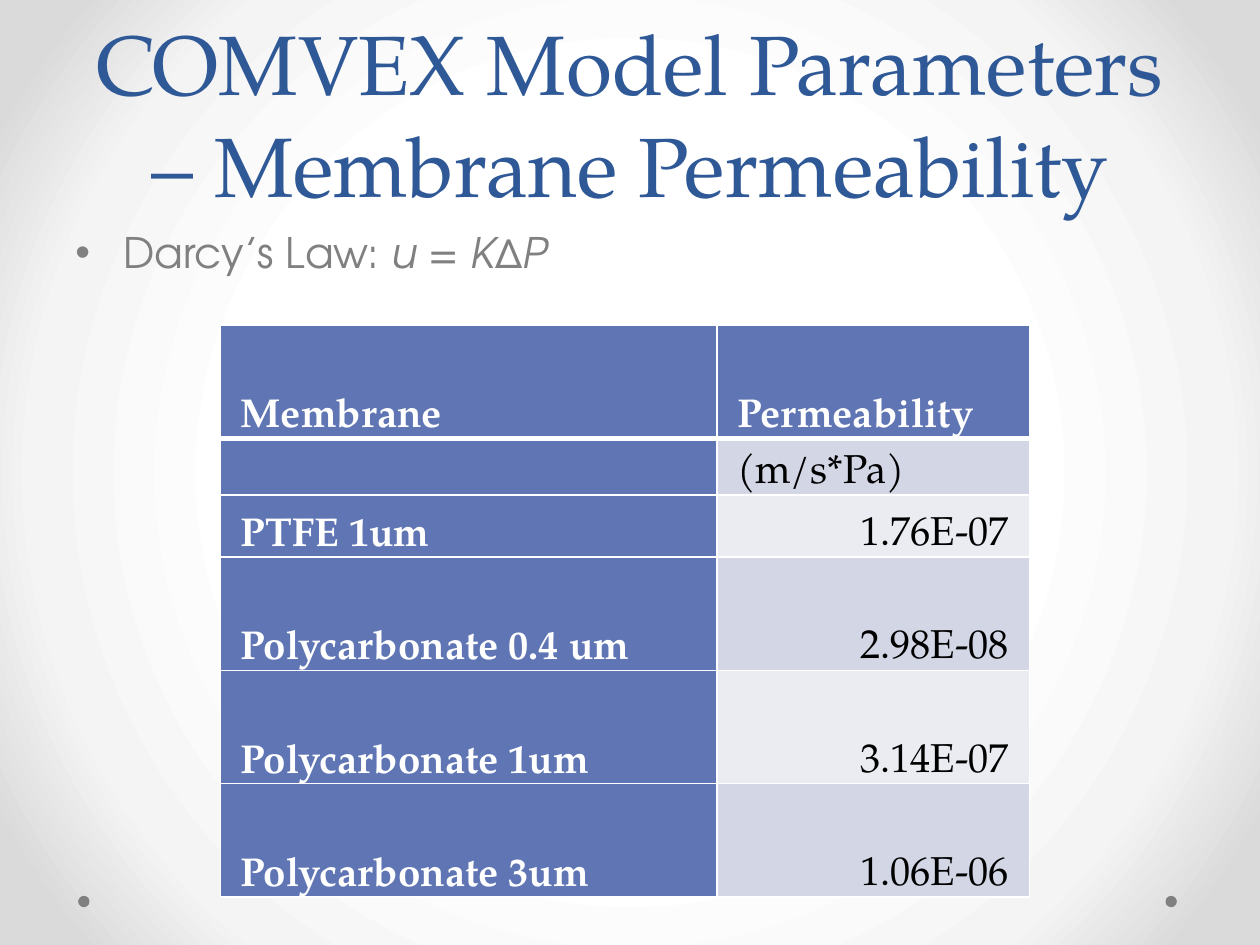
from lxml import etree
from pptx import Presentation
from pptx import util as u
from pptx.dml.color import RGBColor
from pptx.enum import shapes, text
from pptx.oxml import ns

WIDTH, HEIGHT = u.Inches(10), u.Inches(7.5)
SERIF, SANS = "TeX Gyre Pagella", "TeX Gyre Adventor"
WHITE = RGBColor(0xFF, 0xFF, 0xFF)
BLACK = RGBColor(0, 0, 0)
GRAY = RGBColor(0x80, 0x80, 0x80)
NAVY = RGBColor(0x2F, 0x58, 0x97)
BLUE = RGBColor(0x60, 0x76, 0xB4)
BANDS = [RGBColor(0xEA, 0xEC, 0xF2), RGBColor(0xD2, 0xD6, 0xE5)]
BACKGROUND_STOPS = [
    (50, WHITE),
    (76, RGBColor(0xF4, 0xF4, 0xF4)),
    (92, RGBColor(0xDA, 0xDA, 0xDA)),
]
COLUMN_WIDTHS = [3.94, 2.48]
ROW_HEIGHTS = [0.9, 0.45, 0.49, 0.9, 0.9, 0.9]
PERMEABILITIES = [
    ("Membrane", "Permeability"),
    ("", "(m/s*Pa)"),
    ("PTFE 1um", "1.76E-07"),
    ("Polycarbonate 0.4 um", "2.98E-08"),
    ("Polycarbonate 1um", "3.14E-07"),
    ("Polycarbonate 3um", "1.06E-06"),
]


def share(left, top, width, height):
    """Turn shares of the slide into a position and size."""
    return [round(part * side) for part, side in
            zip((left, top, width, height), (WIDTH, HEIGHT) * 2)]


def add_element(parent, tag, **attributes):
    """Append a drawing element to a parent and return it."""
    return etree.SubElement(parent, ns.qn(tag), attributes)


def write(paragraph, words, font=SERIF, size=23, color=BLACK, bold=False,
          italic=False, align=text.PP_ALIGN.LEFT, spacing=None):
    """Add one formatted run to a paragraph."""
    paragraph.alignment = align
    if spacing is not None:
        paragraph.line_spacing = spacing
    run = paragraph.add_run()
    run.text = words
    run.font.name, run.font.size = font, u.Pt(size)
    run.font.bold, run.font.italic = bold, italic
    run.font.color.rgb = color


def paint_background(slide):
    """Give the slide a round gradient that darkens outwards."""
    slide.background.fill.gradient()
    gradient = next(slide.element.iter(ns.qn("a:gradFill")))
    for child in list(gradient):
        gradient.remove(child)
    stops = add_element(gradient, "a:gsLst")
    for position, color in BACKGROUND_STOPS:
        stop = add_element(stops, "a:gs", pos=str(position * 1000))
        add_element(stop, "a:srgbClr", val=str(color))
    circle = add_element(gradient, "a:path", path="circle")
    add_element(circle, "a:fillToRect", l="50000", t="50000", r="50000", b="50000")


def add_dot(slide, left):
    """Add a small gray dot near the foot of the slide."""
    dot = slide.shapes.add_shape(shapes.MSO_SHAPE.OVAL, *share(left, 0.948, 0.009, 0.012))
    dot.shadow.inherit = False
    dot.fill.solid()
    dot.fill.fore_color.rgb = GRAY
    dot.line.fill.background()


def add_text_box(slide, box, anchor):
    """Add a wrapping text box and return its first paragraph."""
    frame = slide.shapes.add_textbox(*box).text_frame
    frame.word_wrap = True
    frame.vertical_anchor = anchor
    return frame.paragraphs[0]


def add_bullet(paragraph, indent):
    """Give a paragraph a round bullet with a hanging indent."""
    properties = paragraph._p.get_or_add_pPr()
    properties.set("marL", str(indent))
    properties.set("indent", str(-indent))
    add_element(properties, "a:buFont", typeface="Arial")
    add_element(properties, "a:buChar", char="•")


def add_law(slide):
    """Add the bullet line with the permeability law."""
    paragraph = add_text_box(slide, share(0.05, 0.233, 0.9, 0.66), text.MSO_ANCHOR.TOP)
    paragraph.space_before = u.Pt(4.8)
    add_bullet(paragraph, u.Inches(0.38))
    pieces = ["Darcy’s Law: ", "u", " = ", "K", "Δ", "P"]
    for index, piece in enumerate(pieces):
        write(paragraph, piece, font=SANS, size=24, color=GRAY, italic=index % 2 == 1)


def add_borders(cell, bottom):
    """Draw white lines around a cell."""
    properties = cell._tc.get_or_add_tcPr()
    for index, (side, points) in enumerate(zip("LRTB", (1, 1, 1, bottom))):
        line = etree.Element(ns.qn(f"a:ln{side}"), w=str(u.Pt(points)))
        fill = add_element(line, "a:solidFill")
        add_element(fill, "a:srgbClr", val=str(WHITE))
        properties.insert(index, line)


def fill_cell(cell, words, row, column):
    """Format a cell by its place in the table and write its words."""
    heading = row == 0 or column == 0
    number = row > 1 and column == 1
    cell.margin_left = cell.margin_right = u.Inches(0.16)
    cell.margin_top = cell.margin_bottom = 0
    cell.vertical_anchor = text.MSO_ANCHOR.BOTTOM
    cell.fill.solid()
    cell.fill.fore_color.rgb = BLUE if heading else BANDS[row % 2]
    add_borders(cell, bottom=3 if row == 0 else 1)
    if words:
        write(cell.text_frame.paragraphs[0], words, spacing=1.15, bold=heading,
              color=WHITE if heading else BLACK,
              align=text.PP_ALIGN.RIGHT if number else text.PP_ALIGN.LEFT)


def add_permeability_table(slide):
    """Add the table of membranes and their permeability."""
    size = len(ROW_HEIGHTS), len(COLUMN_WIDTHS)
    table = slide.shapes.add_table(*size, *share(0.175, 0.344, 0.642, 0.604)).table
    for column, width in zip(table.columns, COLUMN_WIDTHS):
        column.width = u.Inches(width)
    for row, height in zip(table.rows, ROW_HEIGHTS):
        row.height = u.Inches(height)
    for row, values in enumerate(PERMEABILITIES):
        for column, words in enumerate(values):
            fill_cell(table.cell(row, column), words, row, column)


def main():
    """Build the slide and save it."""
    presentation = Presentation()
    presentation.slide_width, presentation.slide_height = WIDTH, HEIGHT
    slide = presentation.slides.add_slide(presentation.slide_layouts[6])
    paint_background(slide)
    for left in (0.925, 0.062):
        add_dot(slide, left)
    title = add_text_box(slide, share(0.05, 0, 0.9, 0.233), text.MSO_ANCHOR.BOTTOM)
    write(title, "COMVEX Model Parameters – Membrane Permeability", size=48,
          color=NAVY, align=text.PP_ALIGN.CENTER, spacing=u.Pt(58))
    add_law(slide)
    add_permeability_table(slide)
    presentation.save("out.pptx")


if __name__ == "__main__":
    main()
